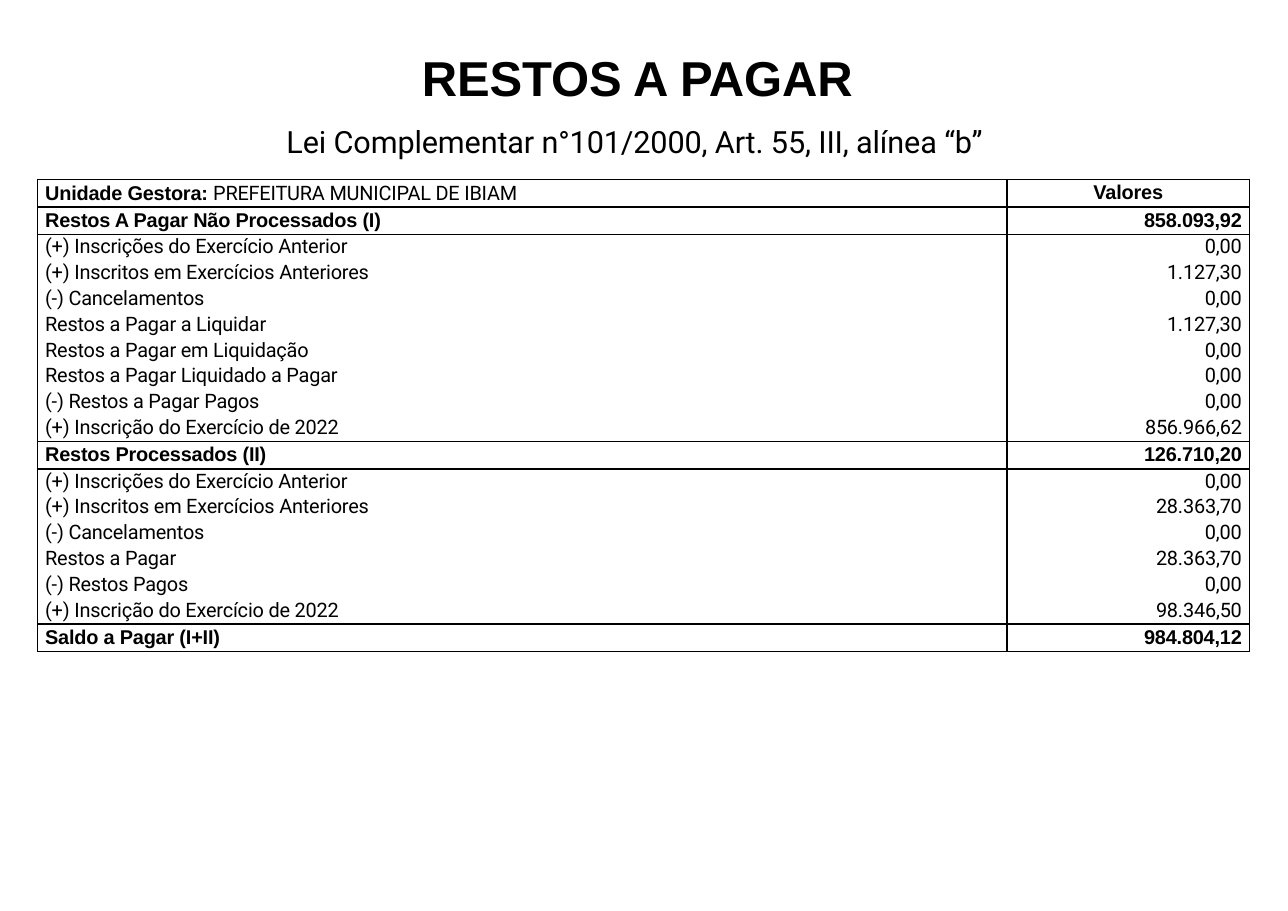
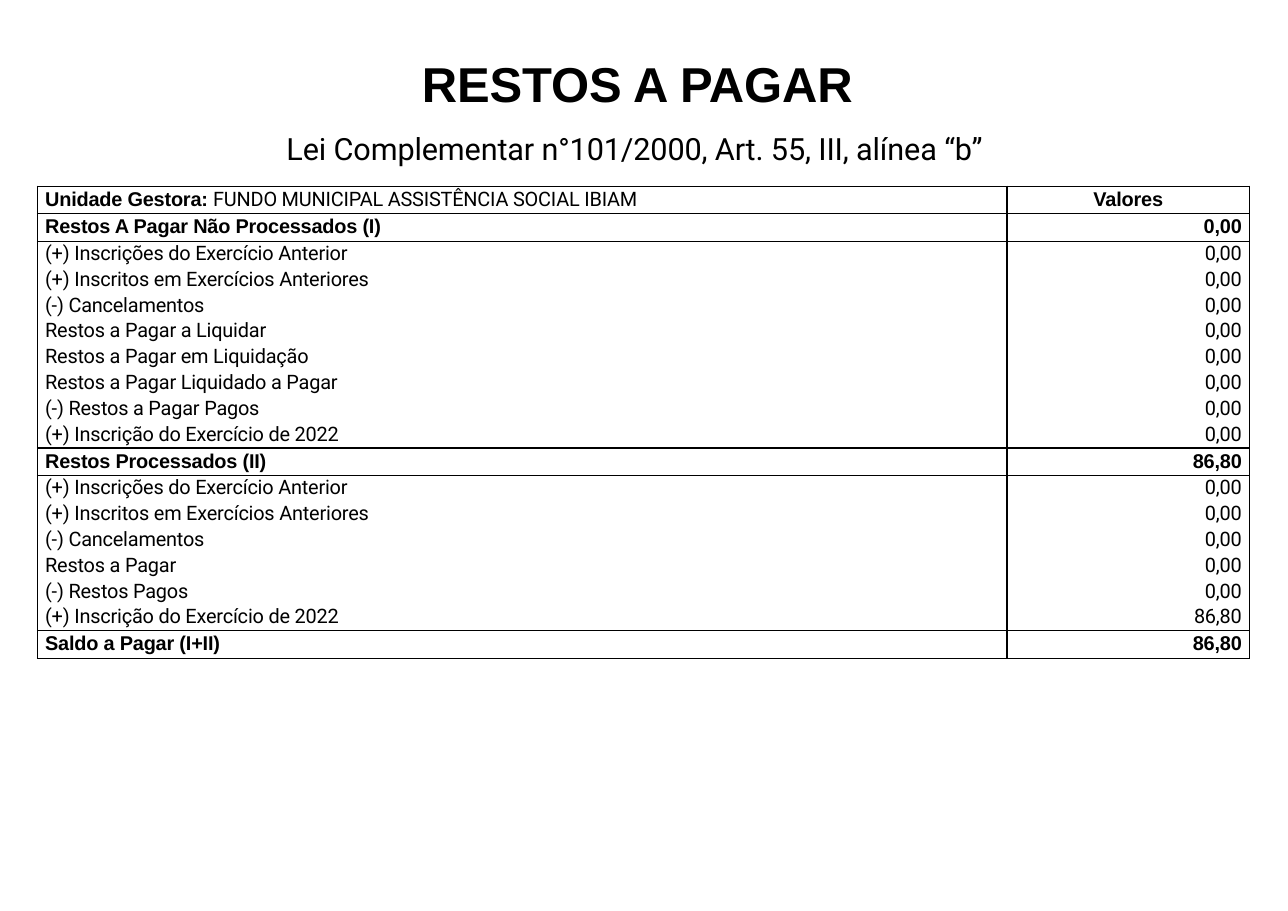
from lxml import etree
from pptx import Presentation
from pptx.dml.color import RGBColor
from pptx.enum import text
from pptx.oxml.ns import qn
from pptx.util import Inches, Pt

BLACK = "000000"
HEAD_FONT, BODY_FONT = "Arial", "Roboto"
LEFT, CENTER, RIGHT = text.PP_ALIGN.LEFT, text.PP_ALIGN.CENTER, text.PP_ALIGN.RIGHT

TITLE = "RESTOS A PAGAR"
LAW = "Lei Complementar n°101/2000, Art. 55, III, alínea “b”"
UNIT_LABEL = "Unidade Gestora: "
VALUES_LABEL = "Valores"
LABELS = [
    "Restos A Pagar Não Processados (I)",
    "(+) Inscrições do Exercício Anterior",
    "(+) Inscritos em Exercícios Anteriores",
    "(-) Cancelamentos",
    "Restos a Pagar a Liquidar",
    "Restos a Pagar em Liquidação",
    "Restos a Pagar Liquidado a Pagar",
    "(-) Restos a Pagar Pagos",
    "(+) Inscrição do Exercício de 2022",
    "Restos Processados (II)",
    "(+) Inscrições do Exercício Anterior",
    "(+) Inscritos em Exercícios Anteriores",
    "(-) Cancelamentos",
    "Restos a Pagar",
    "(-) Restos Pagos",
    "(+) Inscrição do Exercício de 2022",
    "Saldo a Pagar (I+II)",
]
HEAD_ROWS = {0, 1, 10, 17}  # table rows in bold, ruled above and below

REPORTS = [
    {
        "unit": "PREFEITURA MUNICIPAL DE IBIAM",
        "title_top": 0.37,
        "values": ["858.093,92", "0,00", "1.127,30", "0,00", "1.127,30", "0,00",
                   "0,00", "0,00", "856.966,62", "126.710,20", "0,00", "28.363,70",
                   "0,00", "28.363,70", "0,00", "98.346,50", "984.804,12"],
    },
    {
        "unit": "FUNDO MUNICIPAL ASSISTÊNCIA SOCIAL IBIAM",
        "title_top": 0.43,
        "values": ["0,00"] * 9 + ["86,80"] + ["0,00"] * 5 + ["86,80"] * 2,
    },
]

LAW_OFFSET, TABLE_OFFSET = 0.72, 1.26  # below the top of the title
TABLE_LEFT, COL_WIDTHS, TABLE_HEIGHT = 0.34, (8.8, 2.2), 4.29
HEAD_HEIGHT = 0.25
BODY_HEIGHT = (TABLE_HEIGHT - HEAD_HEIGHT * len(HEAD_ROWS)) / (len(LABELS) + 1 - len(HEAD_ROWS))


def rgb(value):
    return RGBColor.from_string(value)


def add_run(p, content, size=13, font=BODY_FONT, bold=False, color=BLACK, spacing=-0.1):
    r = p.add_run()
    r.text = content
    r.font.size, r.font.name, r.font.bold = Pt(size), font, bold
    r.font.color.rgb = rgb(color)
    r._r.get_or_add_rPr().set("spc", str(round(spacing * 100)))


def place_text(sp, box, content, inset_top, **style):
    sp.left, sp.top, sp.width, sp.height = (Inches(v) for v in box)
    tf = sp.text_frame
    tf.word_wrap = True
    tf.auto_size = text.MSO_AUTO_SIZE.NONE
    tf.vertical_anchor = text.MSO_ANCHOR.TOP
    tf.margin_left = tf.margin_right = tf.margin_bottom = 0
    tf.margin_top = Inches(inset_top)
    p = tf.paragraphs[0]
    p.alignment = LEFT
    add_run(p, content, **style)


def set_borders(cell, top, bottom):
    """Rule the sides of a cell, and its top and bottom on request."""
    tcPr = cell._tc.get_or_add_tcPr()
    for side, ruled in (("L", True), ("R", True), ("T", top), ("B", bottom)):
        ln = etree.SubElement(tcPr, qn(f"a:ln{side}"), w=str(Pt(1)))
        if ruled:
            fill = etree.SubElement(ln, qn("a:solidFill"))
            etree.SubElement(fill, qn("a:srgbClr"), val=BLACK)
        else:
            etree.SubElement(ln, qn("a:noFill"))


def fill_cell(cell, row, runs, align):
    head = row in HEAD_ROWS
    set_borders(cell, top=head or row - 1 in HEAD_ROWS, bottom=head or row + 1 in HEAD_ROWS)
    cell.fill.background()
    cell.margin_left = cell.margin_right = Inches(0.07)
    cell.margin_top = Inches(0.02 if head else 0)
    cell.margin_bottom = 0
    cell.vertical_anchor = text.MSO_ANCHOR.TOP
    p = cell.text_frame.paragraphs[0]
    p.alignment = align
    if not head:
        p.line_spacing = Pt(15.6)
    for content, bold in runs:
        add_run(p, content, bold=bold, font=HEAD_FONT if bold else BODY_FONT)


def add_report_table(slide, top, report):
    count = len(LABELS) + 1
    table = slide.shapes.add_table(
        count, 2, Inches(TABLE_LEFT), Inches(top),
        Inches(sum(COL_WIDTHS)), Inches(TABLE_HEIGHT)).table
    table.first_row = table.horz_banding = False
    for col, width in zip(table.columns, COL_WIDTHS):
        col.width = Inches(width)
    for i, row in enumerate(table.rows):
        row.height = Inches(HEAD_HEIGHT if i in HEAD_ROWS else BODY_HEIGHT)

    fill_cell(table.cell(0, 0), 0, [(UNIT_LABEL, True), (report["unit"], False)], LEFT)
    fill_cell(table.cell(0, 1), 0, [(VALUES_LABEL, True)], CENTER)
    for i, (label, value) in enumerate(zip(LABELS, report["values"]), start=1):
        bold = i in HEAD_ROWS
        fill_cell(table.cell(i, 0), i, [(label, bold)], LEFT)
        fill_cell(table.cell(i, 1), i, [(value, bold)], RIGHT)


def add_report(prs, report):
    slide = prs.slides.add_slide(prs.slide_layouts[5])
    top = report["title_top"]
    place_text(slide.shapes.title, (3.83, top, 4.03, 0.56), TITLE, 0.06,
               size=32, font=HEAD_FONT, bold=True)
    law = slide.shapes.add_textbox(0, 0, 0, 0)
    place_text(law, (2.6, top + LAW_OFFSET, 6.49, 0.36), LAW, 0.03, size=20)
    add_report_table(slide, top + TABLE_OFFSET, report)


def main():
    prs = Presentation()
    prs.slide_width, prs.slide_height = Inches(11.69), Inches(8.27)
    for report in REPORTS:
        add_report(prs, report)
    prs.save("out.pptx")


if __name__ == "__main__":
    main()
